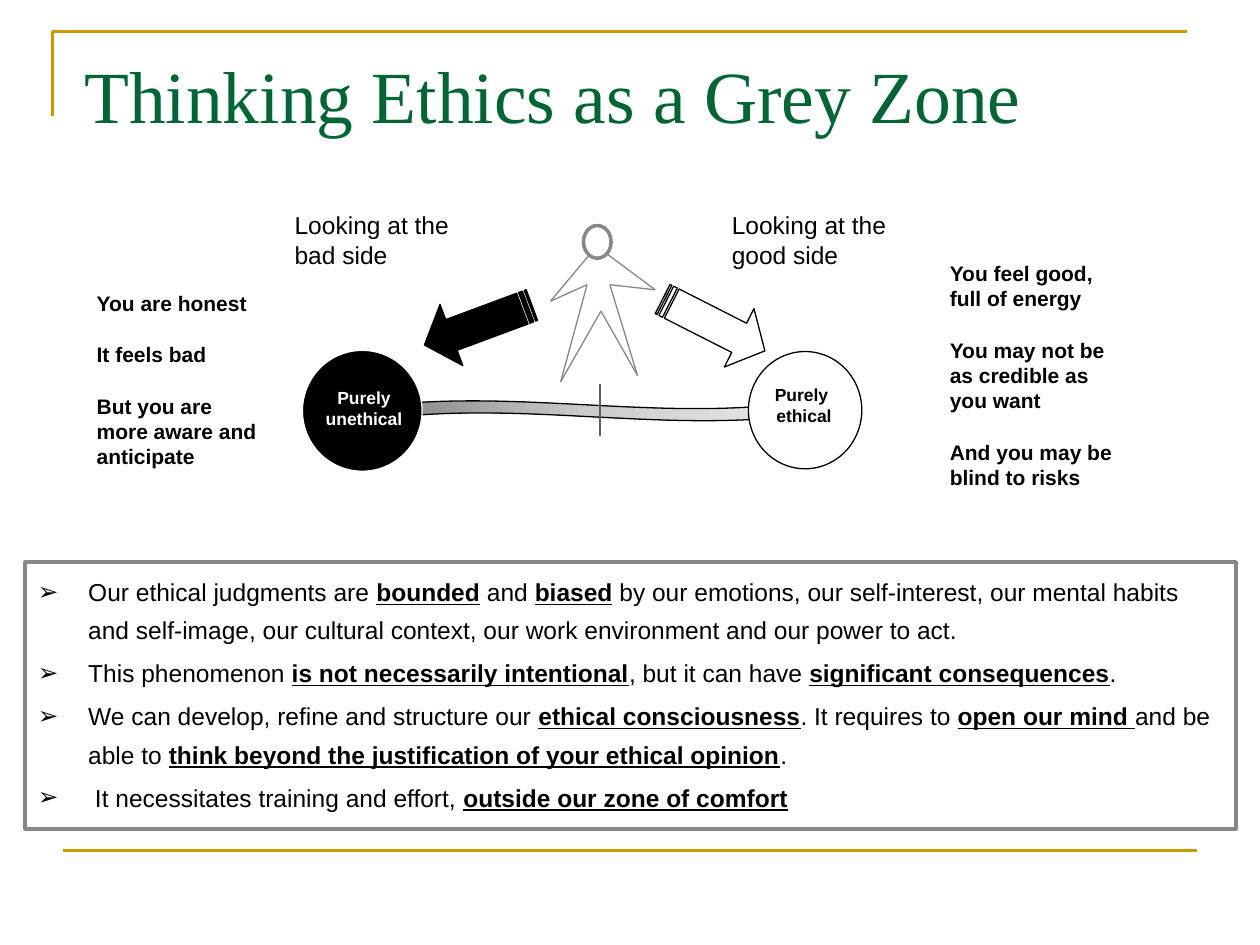
from itertools import pairwise

from copy import deepcopy
from pptx import Presentation
from pptx.dml.color import RGBColor
from pptx.enum.shapes import MSO_CONNECTOR, MSO_SHAPE
from pptx.enum.text import MSO_ANCHOR, MSO_AUTO_SIZE, PP_ALIGN
from pptx.oxml.ns import qn
from pptx.util import Pt

BLACK = RGBColor(0x00, 0x00, 0x00)
WHITE = RGBColor(0xFF, 0xFF, 0xFF)
GREEN = RGBColor(0x00, 0x66, 0x33)
GOLD = RGBColor(0xCC, 0x99, 0x00)
GREY = RGBColor(0x87, 0x87, 0x87)
DARK_GREY = RGBColor(0x5F, 0x5F, 0x5F)
SILVER = RGBColor(0xCC, 0xCC, 0xCC)
PALE_GREY = RGBColor(0xE6, 0xE6, 0xE6)

LESSONS = [
    "Our ethical judgments are **bounded** and **biased** by our emotions, our self-interest, "
    "our mental habits and self-image, our cultural context, our work environment and our power to act.",
    "This phenomenon **is not necessarily intentional**, but it can have **significant consequences**.",
    "We can develop, refine and structure our **ethical consciousness**. It requires to "
    "**open our mind **and be able to **think beyond the justification of your ethical opinion**.",
    " It necessitates training and effort, **outside our zone of comfort**",
]
BAD_SIDE = ["You are honest", "It feels bad", "But you are more aware and anticipate"]
GOOD_SIDE = ["You feel good, full of energy", "You may not be as credible as you want",
             "And you may be blind to risks"]
BODY_OUTLINE = [(340.6, 141.1), (314.6, 172.1), (335.5, 162.7), (320.4, 218.2), (343.4, 177.8),
                (364.3, 214.6), (348.5, 162.7), (374.4, 165.6), (346.3, 144.7)]


class SlideBuilder:
    font = "Arial"
    title_font = "Times New Roman"

    def __init__(self, slide):
        self.slide = slide

    def place(self, item, box):
        item.left, item.top, item.width, item.height = (Pt(v) for v in box)

    def style_run(self, run, size, color=BLACK, bold=False, name=None):
        run.font.name = name or self.font
        run.font.size = Pt(size)
        run.font.color.rgb = color
        run.font.bold = bold

    def paint(self, shape, fill, line, width):
        shape.shadow.inherit = False
        if fill is None:
            shape.fill.background()
        else:
            shape.fill.solid()
            shape.fill.fore_color.rgb = fill
        shape.line.color.rgb = line
        shape.line.width = Pt(width)

    def title(self, text, box):
        heading = self.slide.shapes.title
        self.place(heading, box)
        frame = heading.text_frame
        frame.text = text
        frame.auto_size = MSO_AUTO_SIZE.NONE
        frame.vertical_anchor = MSO_ANCHOR.MIDDLE
        frame.margin_left = frame.margin_right = frame.margin_top = frame.margin_bottom = 0
        frame.paragraphs[0].alignment = PP_ALIGN.LEFT
        self.style_run(frame.paragraphs[0].runs[0], 42, GREEN, name=self.title_font)

    def framed_list(self, items, box):
        """Fill the body placeholder; text between ** marks is bold and underlined."""
        body = self.slide.placeholders[1]
        self.place(body, box)
        body.fill.solid()
        body.fill.fore_color.rgb = WHITE
        body.line.color.rgb = GREY
        body.line.width = Pt(2)
        frame = body.text_frame
        frame.auto_size = MSO_AUTO_SIZE.NONE
        frame.vertical_anchor = MSO_ANCHOR.TOP
        for index, item in enumerate(items):
            paragraph = frame.paragraphs[0] if index == 0 else frame.add_paragraph()
            paragraph.line_spacing = 1.3
            paragraph.space_before = Pt(2.8)
            properties = paragraph._p.get_or_add_pPr()
            properties.set("marL", str(Pt(28.8)))
            properties.set("indent", str(-Pt(28.8)))
            bullet = properties.makeelement(qn("a:buChar"), {"char": "➢"})
            properties.append(bullet)
            for part, words in enumerate(item.split("**")):
                if words:
                    run = paragraph.add_run()
                    run.text = words
                    stressed = part % 2 == 1
                    self.style_run(run, 14, bold=stressed)
                    run.font.underline = stressed

    def text(self, paragraphs, box, size, color=BLACK, bold=False, align=PP_ALIGN.LEFT, gap=0):
        frame = self.slide.shapes.add_textbox(*(Pt(v) for v in box)).text_frame
        frame.word_wrap = True
        frame.text = "\n".join(paragraphs)
        for paragraph in frame.paragraphs:
            paragraph.alignment = align
            paragraph.space_after = Pt(gap)
            self.style_run(paragraph.runs[0], size, color, bold)

    def shape(self, kind, box, fill, line, width=0.75, adjustments=(), rotation=0, parent=None):
        shape = (parent or self.slide).shapes.add_shape(kind, *(Pt(v) for v in box))
        for index, value in enumerate(adjustments):
            shape.adjustments[index] = value
        shape.rotation = rotation
        self.paint(shape, fill, line, width)
        return shape

    def gradient(self, shape, colors):
        """Spread three colours evenly from left to right."""
        shape.fill.gradient()
        shape.fill.gradient_angle = 0
        first_stop = shape._element.spPr.find(qn("a:gradFill")).find(qn("a:gsLst"))[0]
        first_stop.addnext(deepcopy(first_stop))
        for index, (stop, color) in enumerate(zip(shape.fill.gradient_stops, colors)):
            stop.position = index / (len(colors) - 1)
            stop.color.rgb = color

    def line(self, start, end, color, width, parent=None):
        connector = (parent or self.slide).shapes.add_connector(
            MSO_CONNECTOR.STRAIGHT, *(Pt(v) for v in (*start, *end)))
        connector.line.color.rgb = color
        connector.line.width = Pt(width)
        properties = connector._element.spPr
        properties.append(properties.makeelement(qn("a:effectLst"), {}))

    def polyline(self, points, color, width):
        start, *rest = [(Pt(x), Pt(y)) for x, y in points]
        builder = self.slide.shapes.build_freeform(*start)
        builder.add_line_segments(rest, close=False)
        self.paint(builder.convert_to_shape(), None, color, width)

    def stick_figure(self, outline, head):
        figure = self.slide.shapes.add_group_shape()
        for start, end in pairwise(outline):
            self.line(start, end, GREY, 0.75, figure)
        self.shape(MSO_SHAPE.OVAL, head, WHITE, GREY, 2, parent=figure)


def main():
    deck = Presentation()
    deck.slide_width, deck.slide_height = Pt(720), Pt(540)
    page = SlideBuilder(deck.slides.add_slide(deck.slide_layouts[1]))

    page.polyline([(30.2, 66.2), (30.2, 18), (678.2, 18)], GOLD, 1.5)
    page.line((36, 486), (684, 486), GOLD, 1.5)
    page.title("Thinking Ethics as a Grey Zone", (48.2, 23.8, 635.8, 59.8))
    page.framed_list(LESSONS, (14.4, 321.1, 691.9, 152.6))

    page.text(GOOD_SIDE, (535.7, 145.4, 108, 138.2), 12, bold=True, gap=15)
    page.text(BAD_SIDE, (48.2, 162.4, 108, 108.7), 12, bold=True, gap=15)
    page.text(["Looking at the good side"], (411.1, 116.6, 125.3, 41), 14)
    page.text(["Looking at the bad side"], (161.3, 116.6, 124.6, 41), 14)

    grey_zone = page.shape(MSO_SHAPE.WAVE, (223.2, 229, 226.1, 11.5), WHITE, BLACK,
                           adjustments=(0.2, 0.01))
    page.gradient(grey_zone, (GREY, SILVER, PALE_GREY))
    page.shape(MSO_SHAPE.OVAL, (427.7, 200.9, 64.8, 67), WHITE, BLACK)
    page.text(["Purely ", "ethical"], (434.2, 216, 50.4, 31.7), 10, bold=True, align=PP_ALIGN.CENTER)
    page.line((342.7, 219.6), (342.7, 249.1), DARK_GREY, 1)

    for left, fill, rotation in ((240.5, BLACK, 159.6), (375.1, WHITE, 26.9)):
        page.shape(MSO_SHAPE.STRIPED_RIGHT_ARROW, (left, 167, 65.5, 37.4), fill, BLACK,
                   adjustments=(0.5, 0.44), rotation=rotation)

    page.shape(MSO_SHAPE.OVAL, (172.8, 200.2, 68.4, 69.1), BLACK, WHITE)
    page.text(["Purely", "unethical"], (175, 217.4, 66, 31.7), 10, WHITE, True, PP_ALIGN.CENTER)
    page.stick_figure(BODY_OUTLINE, (333.4, 128.9, 15.8, 18.7))

    deck.save("out.pptx")


if __name__ == "__main__":
    main()
